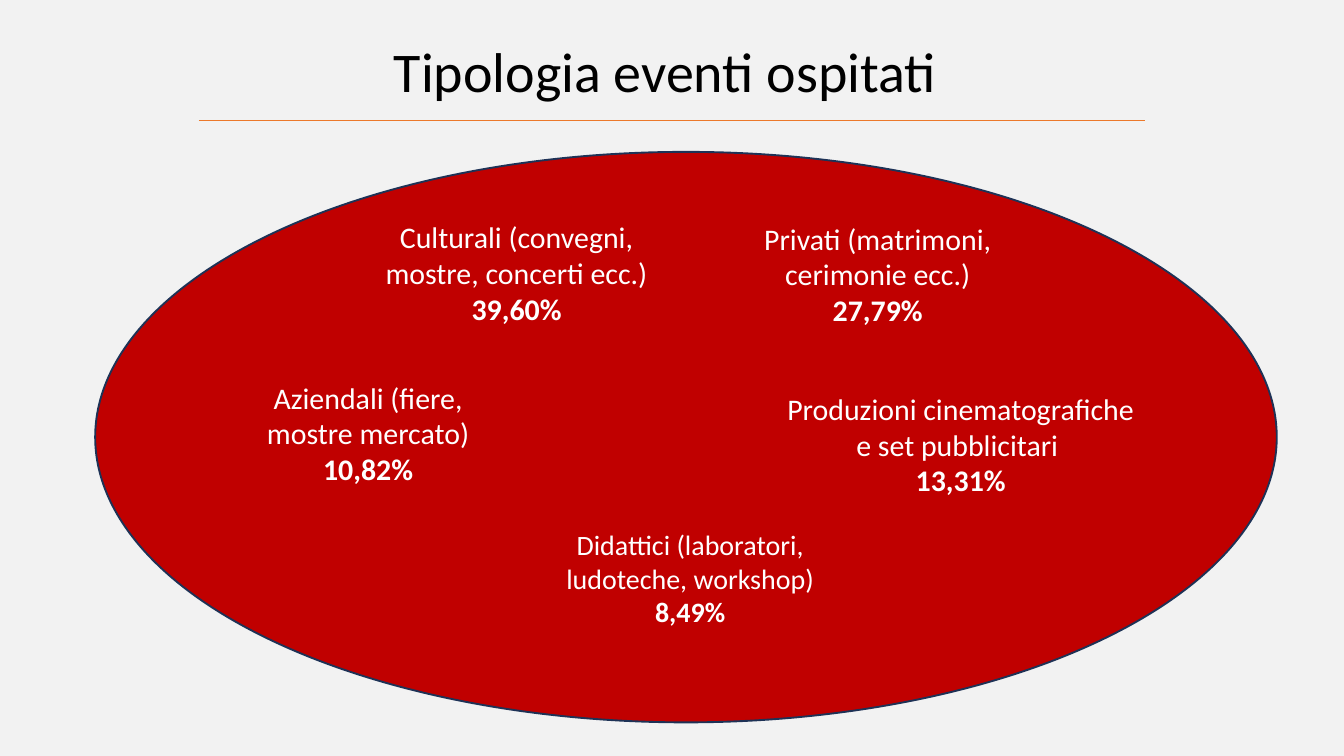
from lxml.etree import SubElement
from pptx import Presentation
from pptx.dml.color import RGBColor
from pptx.enum.shapes import MSO_CONNECTOR, MSO_SHAPE
from pptx.enum.text import MSO_AUTO_SIZE, PP_ALIGN
from pptx.oxml.ns import qn
from pptx.util import Pt

PX = 9525
COLORS = {
    "background": "F2F2F2",
    "title": "000000",
    "rule": "EC792B",
    "oval": "C00000",
    "outline": "1E3256",
    "label": "FFFFFF",
}


def color(name):
    return RGBColor.from_string(COLORS[name])


def add_text(left, top, width, height, paragraphs, size, color_name):
    frame = slide.shapes.add_textbox(left * PX, top * PX, width * PX, height * PX).text_frame
    frame.word_wrap = True
    frame.auto_size = MSO_AUTO_SIZE.SHAPE_TO_FIT_TEXT
    for index, (text, bold) in enumerate(paragraphs):
        paragraph = frame.add_paragraph() if index else frame.paragraphs[0]
        paragraph.alignment = PP_ALIGN.CENTER
        run = paragraph.add_run()
        run.text = text
        run.font.name = "Calibri"
        run.font.size = Pt(size)
        run.font.bold = bold
        run.font.color.rgb = color(color_name)


prs = Presentation()
prs.slide_width = 1920 * PX
prs.slide_height = 1080 * PX
slide = prs.slides.add_slide(prs.slide_layouts[6])
slide.background.fill.solid()
slide.background.fill.fore_color.rgb = color("background")

add_text(157, 48, 1604, 107, [("Tipologia eventi ospitati ", False)], 60, "title")

rule = slide.shapes.add_connector(MSO_CONNECTOR.STRAIGHT, 284 * PX, 172 * PX, 1636 * PX, 172 * PX)
rule.line.color.rgb = color("rule")
rule.line.width = Pt(0.75)
SubElement(rule._element.spPr, qn("a:effectLst"))

oval = slide.shapes.add_shape(MSO_SHAPE.OVAL, 136 * PX, 217 * PX, 1688 * PX, 815 * PX)
oval.shadow.inherit = False
oval.fill.solid()
oval.fill.fore_color.rgb = color("oval")
oval.line.color.rgb = color("outline")
oval.line.width = Pt(2)

events = [
    (540, 308, 396, 165, 32, "Culturali (convegni, mostre, concerti ecc.)", "39,60%"),
    (1072, 310, 364, 165, 32, "Privati (matrimoni, cerimonie ecc.)", "27,79%"),
    (1112, 553, 521, 165, 32, "Produzioni cinematografiche e set pubblicitari ", "13,31%"),
    (328, 537, 396, 165, 32, "Aziendali (fiere, mostre mercato)", "10,82%"),
    (788, 749, 396, 156, 30, "Didattici (laboratori, ludoteche, workshop)", "8,49%"),
]
for left, top, width, height, size, event, share in events:
    add_text(left, top, width, height, [(event, False), (share, True)], size, "label")

prs.save("out.pptx")
